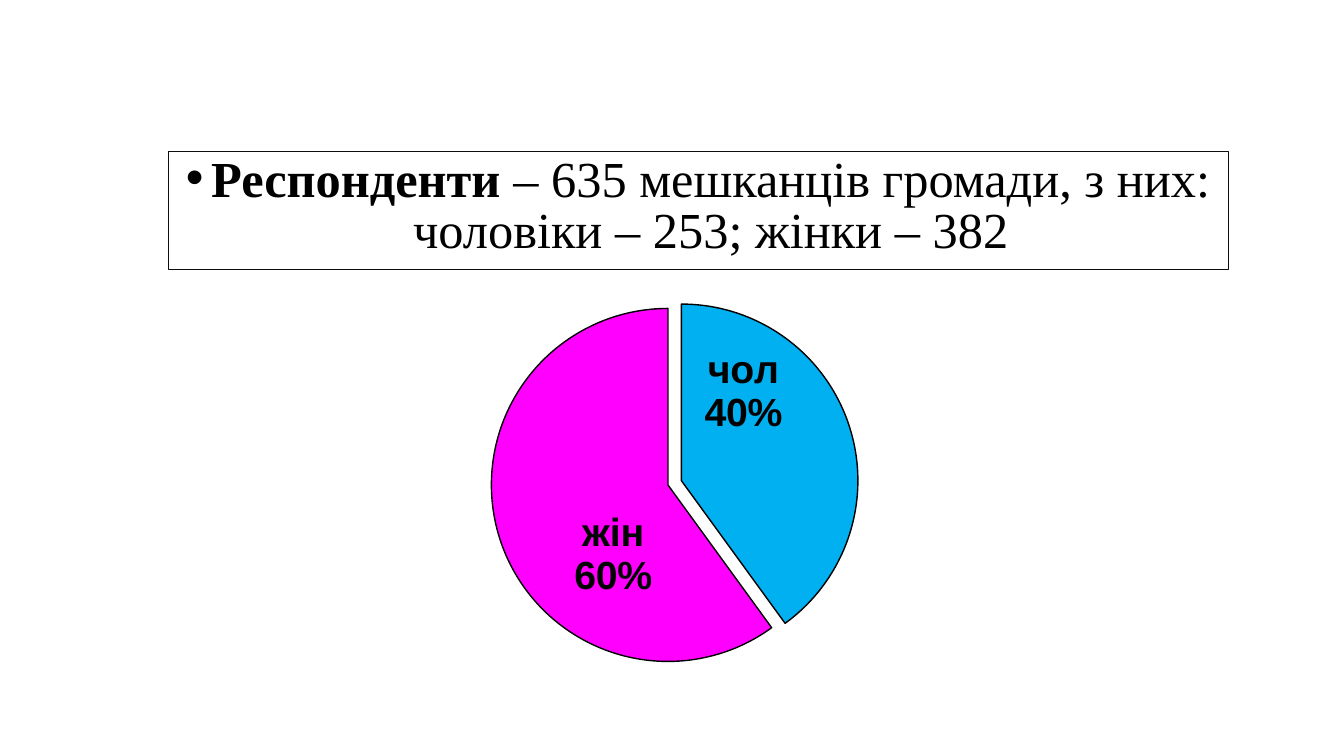
from lxml import etree
from pptx import Presentation
from pptx.chart.data import CategoryChartData
from pptx.dml.color import RGBColor
from pptx.enum.chart import XL_CHART_TYPE, XL_LABEL_POSITION
from pptx.enum.shapes import MSO_SHAPE
from pptx.enum.text import MSO_ANCHOR, PP_ALIGN
from pptx.oxml.ns import qn
from pptx.util import Pt

PIE = XL_CHART_TYPE.PIE
LABEL_CENTER = XL_LABEL_POSITION.CENTER
RECTANGLE = MSO_SHAPE.RECTANGLE
TOP = MSO_ANCHOR.TOP
CENTER = PP_ALIGN.CENTER

PX = 9144
SLIDE = (1333, 750)
SUMMARY_BOX = (167, 150, 1051, 117)
SUMMARY = [
    ("Респонденти ", True),
    ("– 635 мешканців громади, з них: чоловіки – 253; жінки – 382", False),
]
BULLET_INDENT = 25
CHART_BOX = (300, 250, 725, 467)
PLOT = {"x": 0.15, "y": 0.12, "w": 0.7, "h": 0.75}
GENDERS = [
    ("чол", 40, "00B0F0", 8, {"x": -0.03, "y": -0.13}),
    ("жін", 60, "FF00FF", 0, {"x": 0.04, "y": 0.09}),
]


def emu(lengths):
    return [length * PX for length in lengths]


def color(value):
    return RGBColor.from_string(value)


def add(parent, tag, **attributes):
    return etree.SubElement(parent, qn(tag), attributes)


def make_layout(sizes, inner=False):
    layout = etree.Element(qn("c:layout"))
    manual = add(layout, "c:manualLayout")
    if inner:
        add(manual, "c:layoutTarget", val="inner")
        for axis in "xy":
            add(manual, f"c:{axis}Mode", val="edge")
    for side, size in sizes.items():
        add(manual, f"c:{side}", val=str(size))
    return layout


def style_label_font(font):
    font.name = "Arial"
    font.size = Pt(28)
    font.bold = True
    font.color.rgb = color("000000")


def add_summary(slide):
    box = slide.shapes.add_shape(RECTANGLE, *emu(SUMMARY_BOX))
    box.shadow.inherit = False
    box.fill.background()
    box.line.color.rgb = color("0D0D0D")
    box.line.width = Pt(0.5)
    frame = box.text_frame
    frame.word_wrap = True
    frame.vertical_anchor = TOP
    paragraph = frame.paragraphs[0]
    paragraph.alignment = CENTER
    paragraph.line_spacing = 0.85
    properties = paragraph._p.get_or_add_pPr()
    properties.set("marL", str(BULLET_INDENT * PX))
    properties.set("indent", str(-BULLET_INDENT * PX))
    add(properties, "a:buFont", typeface="Arial")
    add(properties, "a:buChar", char="•")
    paragraph.font.name = "Times New Roman"
    paragraph.font.size = Pt(36)
    paragraph.font.color.rgb = color("000000")
    for words, bold in SUMMARY:
        run = paragraph.add_run()
        run.text = words
        run.font.bold = bold


def add_gender_chart(slide):
    data = CategoryChartData()
    data.categories = [gender[0] for gender in GENDERS]
    data.add_series("Series 1", [gender[1] for gender in GENDERS])
    chart = slide.shapes.add_chart(PIE, *emu(CHART_BOX), data).chart
    chart.has_legend = False
    chart.has_title = False
    style_label_font(chart.font)
    plot = chart.plots[0]
    plot.vary_by_categories = True

    plot_area = chart._chartSpace.chart.plotArea
    for old in plot_area.findall(qn("c:layout")):
        plot_area.remove(old)
    plot_area.insert(0, make_layout(PLOT, inner=True))

    series = plot.series[0]
    labels = series.data_labels
    labels.show_value = False
    labels.show_category_name = True
    labels.show_percentage = True
    labels.number_format = "0%"
    labels.number_format_is_linked = False
    style_label_font(labels.font)

    for index, (_, _, fill, explosion, offset) in enumerate(GENDERS):
        point = series.points[index]
        point.format.fill.solid()
        point.format.fill.fore_color.rgb = color(fill)
        point.format.line.color.rgb = color("000000")
        point.format.line.width = Pt(1)
        style_label_font(point.data_label.font)
        point.data_label.position = LABEL_CENTER

        label = labels._element.findall(qn("c:dLbl"))[index]
        label.find(qn("c:idx")).addnext(make_layout(offset))
        for part, shown in (("Val", "0"), ("CatName", "1"), ("Percent", "1")):
            label.find(qn(f"c:show{part}")).set("val", shown)
        add(label, "c:separator").text = "\n"

        slice_properties = series._element.findall(qn("c:dPt"))[index].find(qn("c:spPr"))
        burst = etree.Element(qn("c:explosion"), val=str(explosion))
        slice_properties.addprevious(burst)


def main():
    deck = Presentation()
    deck.slide_width, deck.slide_height = emu(SLIDE)
    slide = deck.slides.add_slide(deck.slide_layouts[6])
    add_summary(slide)
    add_gender_chart(slide)
    deck.save("out.pptx")


if __name__ == "__main__":
    main()
